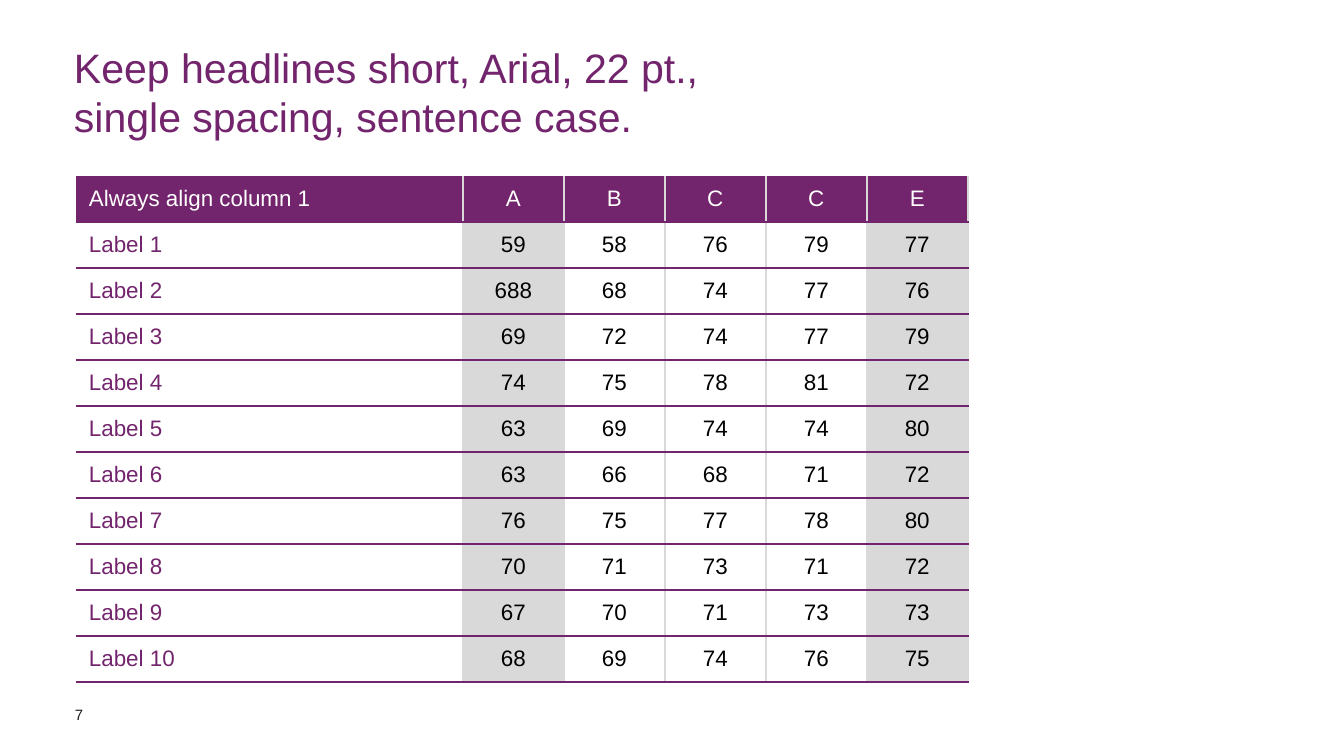
"""Build a slide with a headline, a ruled score table and a page number."""
from lxml.etree import SubElement
from pptx import Presentation
from pptx.dml.color import RGBColor
from pptx.enum.text import MSO_ANCHOR as Anchor, PP_ALIGN as Align
from pptx.oxml.ns import qn
from pptx.util import Pt

PX = 914400 / 134.4
COLORS = {"plum": "72246C", "gray": "D9D9D9", "white": "FFFFFF",
          "black": "000000", "ink": "1D1D1D"}
HEADLINE = "Keep headlines short, Arial, 22 pt.,\vsingle spacing, sentence case."
PAGE = "7"
HEADER = ["Always align column 1", "A", "B", "C", "C", "E"]
SCORES = [
    [59, 58, 76, 79, 77],
    [688, 68, 74, 77, 76],
    [69, 72, 74, 77, 79],
    [74, 75, 78, 81, 72],
    [63, 69, 74, 74, 80],
    [63, 66, 68, 71, 72],
    [76, 75, 77, 78, 80],
    [70, 71, 73, 71, 72],
    [67, 70, 71, 73, 73],
    [68, 69, 74, 76, 75],
]
ROWS = [HEADER] + [[f"Label {i}", *row] for i, row in enumerate(SCORES, 1)]
LEFT, TOP, ROW_H = 76, 176, 46
COL_W = [387] + [101] * 5
SHADED = (1, 5)


def px(n):
    return round(n * PX)


def color(name):
    return RGBColor.from_string(COLORS[name])


def set_attrs(obj, values):
    for name, value in values.items():
        setattr(obj, name, value)


def write(tf, text, size, tint, align=Align.LEFT):
    p = tf.paragraphs[0]
    p.text = text
    p.alignment = align
    for r in p.runs:
        set_attrs(r.font, {"name": "Arial", "size": Pt(size), "bold": False})
        r.font.color.rgb = color(tint)


def add_text(s, box, text, size, tint, anchor):
    tf = s.shapes.add_textbox(*map(px, box)).text_frame
    set_attrs(tf, {"word_wrap": True, "vertical_anchor": anchor, "margin_left": 0,
                   "margin_right": 0, "margin_top": 0, "margin_bottom": 0})
    write(tf, text, size, tint)


def add_borders(cell, row, col):
    edges = {"lnL": "gray" if col else None, "lnR": "gray",
             "lnT": "plum" if row else None, "lnB": "plum"}
    for tag, tint in edges.items():
        ln = SubElement(cell._tc.get_or_add_tcPr(), qn(f"a:{tag}"), w=str(Pt(1)))
        if tint:
            fill = SubElement(ln, qn("a:solidFill"))
            SubElement(fill, qn("a:srgbClr"), val=COLORS[tint])
        else:
            SubElement(ln, qn("a:noFill"))


def style_cell(cell, row, col, value):
    set_attrs(cell, {"vertical_anchor": Anchor.MIDDLE, "margin_left": px(13),
                     "margin_right": px(13), "margin_top": 0, "margin_bottom": 0})
    add_borders(cell, row, col)
    fill = "plum" if row == 0 else "gray" if col in SHADED else None
    if fill:
        cell.fill.solid()
        cell.fill.fore_color.rgb = color(fill)
    else:
        cell.fill.background()
    tint = "white" if row == 0 else "black" if col else "plum"
    write(cell.text_frame, str(value), 12, tint, Align.CENTER if col else Align.LEFT)


def add_score_table(s):
    box = LEFT, TOP, sum(COL_W), ROW_H * len(ROWS)
    table = s.shapes.add_table(len(ROWS), len(COL_W), *map(px, box)).table
    set_attrs(table, {"first_row": False, "horz_banding": False})
    for column, width in zip(table.columns, COL_W):
        column.width = px(width)
    for i, values in enumerate(ROWS):
        table.rows[i].height = px(ROW_H)
        for j, value in enumerate(values):
            style_cell(table.cell(i, j), i, j, value)


def main():
    prs = Presentation()
    set_attrs(prs, {"slide_width": px(1344), "slide_height": px(756)})
    s = prs.slides.add_slide(prs.slide_layouts[6])
    add_text(s, (74, 54, 894, 87), HEADLINE, 22, "plum", Anchor.BOTTOM)
    add_text(s, (75, 706, 31, 40), PAGE, 8, "ink", Anchor.TOP)
    add_score_table(s)
    prs.save("out.pptx")


if __name__ == "__main__":
    main()
